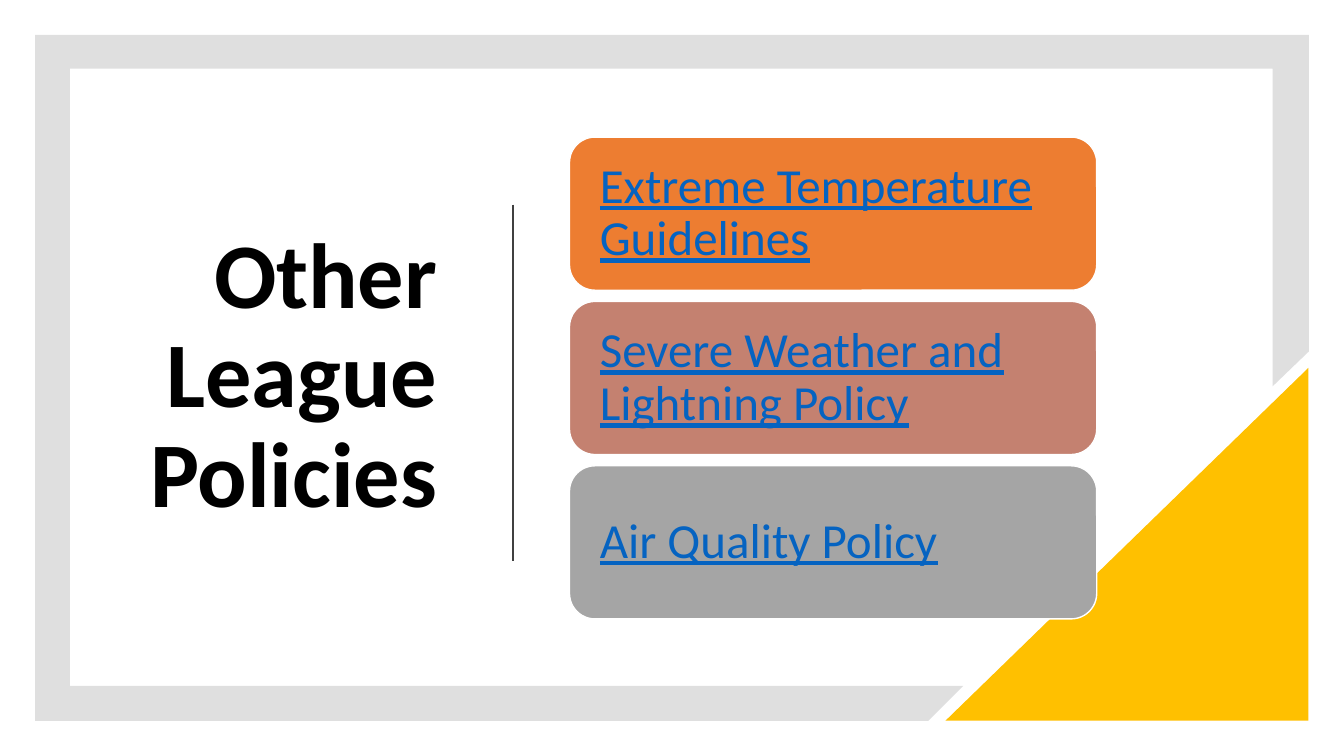
from lxml import etree
from pptx import Presentation
from pptx.dml.color import RGBColor
from pptx.enum import shapes, text
from pptx.oxml import ns
from pptx.util import Pt

TITLE = "Other League Policies"
POLICIES = [
    ("Extreme Temperature Guidelines", "orange"),
    ("Severe Weather and Lightning Policy", "rose"),
    ("Air Quality Policy", "gray"),
]
COLORS = {
    "orange": "ED7D31", "rose": "C48170", "gray": "A5A5A5",
    "frame": "808080", "corner": "FFC000", "rule": "404040",
    "link": "0563C1", "black": "000000", "white": "FFFFFF",
}
FONT = "Calibri"
FRAME = [
    (25.2, 25.2), (934.6, 25.2), (934.6, 251.3), (909.4, 275.8),
    (909.4, 49), (50.4, 49), (50.4, 490.3), (688.3, 490.3),
    (663.1, 514.8), (25.2, 514.8),
]
CORNER = (675.4, 262.8, 259.2, 252)
TITLE_BOX = (79.2, 93.6, 240.5, 352.8)
RULE = (366.5, 146.2, 366.5, 401)
CARD_LEFT, CARD_TOP, CARD_WIDTH, CARD_HEIGHT = 406.8, 97.9, 376.6, 109.4
CARD_PITCH = 117.4
CARD_INSET = 16.3


def color(name):
    return RGBColor.from_string(COLORS[name])


def points(values):
    return [Pt(value) for value in values]


def paint(shape, fill, line=None):
    shape.shadow.inherit = False
    shape.fill.solid()
    shape.fill.fore_color.rgb = color(fill)
    if line:
        shape.line.color.rgb = color(line)
        shape.line.width = Pt(1)
    else:
        shape.line.fill.background()


def write(shape, words, size, ink, align, bold=False, underline=False):
    frame = shape.text_frame
    frame.text = words
    frame.word_wrap = True
    frame.auto_size = text.MSO_AUTO_SIZE.NONE
    frame.vertical_anchor = text.MSO_ANCHOR.MIDDLE
    para = frame.paragraphs[0]
    para.alignment = align
    para.line_spacing = 0.9
    para.space_before = Pt(0)
    font = para.runs[0].font
    font.name, font.size = FONT, Pt(size)
    font.bold, font.underline = bold, underline
    font.color.rgb = color(ink)


deck = Presentation()
deck.slide_width, deck.slide_height = Pt(960), Pt(540)
page = deck.slides.add_slide(deck.slide_layouts[5])

builder = page.shapes.build_freeform(*FRAME[0], scale=Pt(1))
builder.add_line_segments(FRAME[1:], close=True)
border = builder.convert_to_shape()
paint(border, "frame")
tint = border.fill._xPr.find(".//" + ns.qn("a:srgbClr"))
etree.SubElement(tint, ns.qn("a:alpha"), val="25000")

corner = page.shapes.add_shape(shapes.MSO_SHAPE.RIGHT_TRIANGLE, *points(CORNER))
corner._element.spPr.xfrm.set("flipH", "1")
paint(corner, "corner")

title = page.shapes.title
title.left, title.top, title.width, title.height = points(TITLE_BOX)
write(title, TITLE, 66, "black", text.PP_ALIGN.RIGHT, bold=True)

rule = page.shapes.add_connector(shapes.MSO_CONNECTOR.STRAIGHT, *points(RULE))
rule.line.color.rgb = color("rule")
rule.line.width = Pt(1.5)
etree.SubElement(rule._element.spPr, ns.qn("a:effectLst"))

for index, (policy, fill) in enumerate(POLICIES):
    top = CARD_TOP + index * CARD_PITCH
    card = page.shapes.add_shape(
        shapes.MSO_SHAPE.ROUNDED_RECTANGLE,
        *points((CARD_LEFT, top, CARD_WIDTH, CARD_HEIGHT)))
    paint(card, fill, "white")
    write(card, policy, 35, "link", text.PP_ALIGN.LEFT, underline=True)
    card.text_frame.margin_left = card.text_frame.margin_right = Pt(CARD_INSET)

deck.save("out.pptx")
